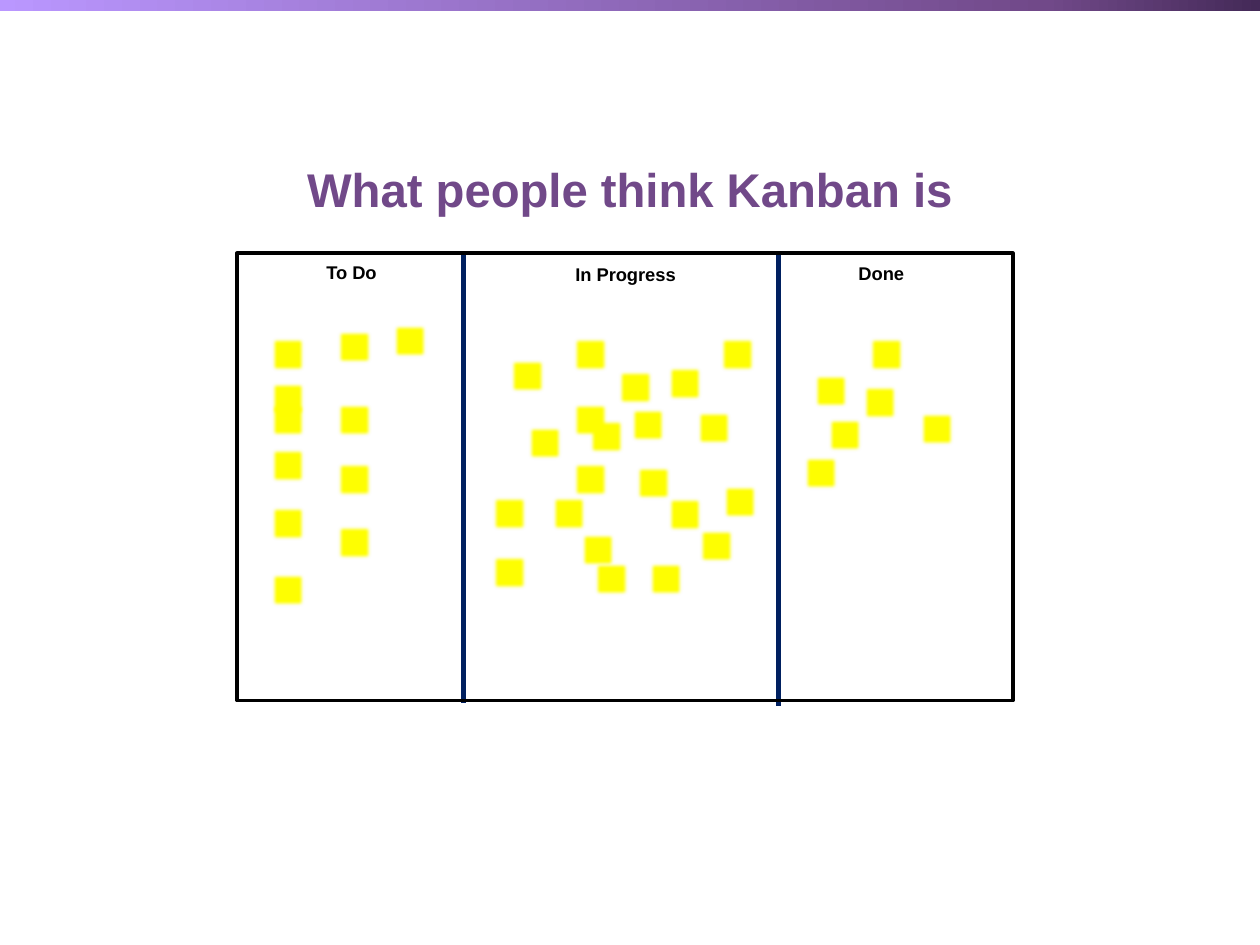
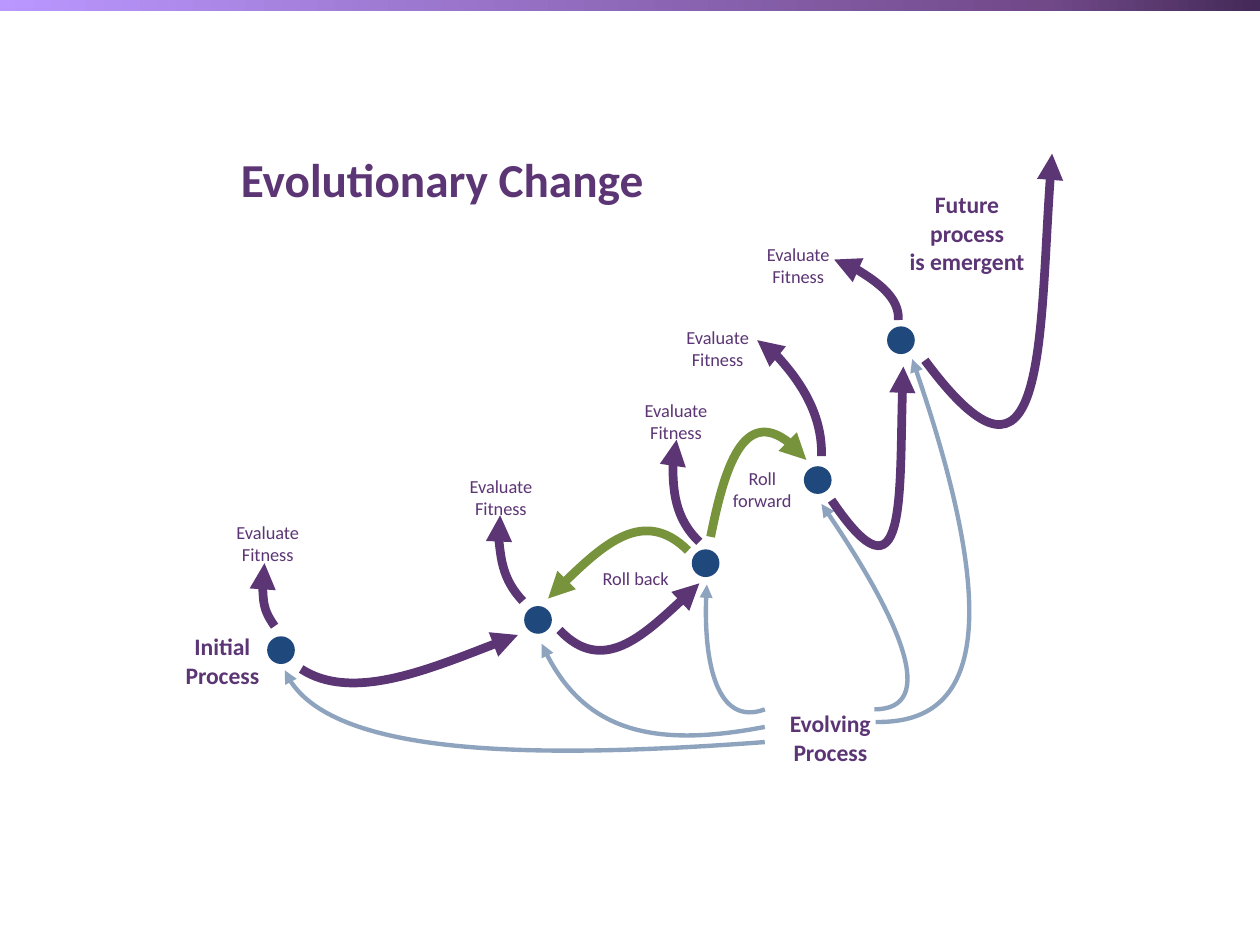
import pptx
import pptx.util
from pptx.dml.color import RGBColor
from pptx.enum.shapes import MSO_CONNECTOR, MSO_SHAPE
from pptx.enum.text import MSO_ANCHOR, MSO_AUTO_SIZE, PP_ALIGN
from pptx.oxml.ns import qn
from copy import deepcopy
from lxml import etree

BLACK = RGBColor(0x00, 0x00, 0x00)
NAVY = RGBColor(0x00, 0x20, 0x60)
YELLOW = RGBColor(0xFF, 0xFF, 0x00)
BLUE = RGBColor(0x1F, 0x49, 0x7D)
GREEN = RGBColor(0x77, 0x93, 0x3C)
VIOLET = RGBColor(0x5C, 0x35, 0x75)
PLUM = RGBColor(0x71, 0x49, 0x89)
BAND_STOPS = [
    (0, RGBColor(0x44, 0x2A, 0x58)),
    (0.17, PLUM),
    (1, RGBColor(0xBA, 0x97, 0xFF)),
]
UNIT = 2.54  # centimetres in one layout unit
NOTE, DOT = 0.29, 0.22

# Sticky notes per board column: left edge -> top edges
TO_DO = {
    2.14: [2.67, 3.02, 3.19, 3.55, 4.01, 4.54],
    2.67: [2.61, 3.19, 3.66, 4.16],
    3.11: [2.56],
}
IN_PROGRESS = {
    3.9: [3.93, 4.4], 4.04: [2.84], 4.18: [3.37], 4.37: [3.93],
    4.54: [2.67, 3.19, 3.66], 4.6: [4.22], 4.67: [3.32], 4.71: [4.45],
    4.9: [2.93], 5: [3.23], 5.04: [3.69], 5.14: [4.45],
    5.29: [2.9, 3.94], 5.52: [3.25], 5.54: [4.19], 5.71: [2.67], 5.73: [3.84],
}
DONE = {
    6.37: [3.61], 6.45: [2.96], 6.56: [3.31],
    6.84: [3.05], 6.89: [2.67], 7.29: [3.26],
}

# Curves: start, two control points, arrow tip
PROCESS_DOTS = [(2.12, 5.05), (4.16, 4.81), (5.49, 4.36), (6.38, 3.7), (7.04, 2.59)]
STEPS = [
    [(2.39, 5.31), (2.79, 5.57), (3.54, 5.26), (4.11, 5.04)],
    [(4.44, 5), (4.78, 5.36), (5.22, 4.95), (5.55, 4.63)],
    [(6.6, 3.97), (7.2, 4.86), (7.13, 3.79), (7.17, 2.91)],
    [(7.34, 2.86), (8.31, 4.17), (8.24, 2.55), (8.35, 1.22)],
]
EVOLVING = [
    [(6.07, 5.89), (4.2, 6.03), (2.54, 5.99), (2.26, 5.32)],
    [(6.07, 5.77), (5.19, 5.94), (4.6, 5.79), (4.3, 5.11)],
    [(6.07, 5.63), (5.69, 5.77), (5.57, 5.2), (5.61, 4.64)],
    [(6.95, 5.73), (7.59, 5.74), (8.09, 5.28), (7.24, 2.85)],
    [(6.94, 5.63), (7.46, 5.63), (7.12, 4.87), (6.52, 4)],
]
# Label position and curve of each fitness check
CHECKS = [
    ((1.72, 4.09), [(2.18, 4.97), (2.08, 4.83), (2.06, 4.54), (2.1, 4.47)]),
    ((3.57, 3.72), [(4.15, 4.77), (3.99, 4.6), (3.92, 4.2), (3.97, 4.09)]),
    ((4.96, 3.12), [(5.55, 4.3), (5.35, 4.11), (5.3, 3.63), (5.37, 3.49)]),
    ((5.29, 2.54), [(6.52, 3.62), (6.53, 3.27), (6.18, 2.76), (6.01, 2.7)]),
    ((5.93, 1.88), [(7.13, 2.54), (7.14, 2.36), (6.79, 2.09), (6.62, 2.06)]),
]
ROLL_BACK = [(5.46, 4.37), (5.11, 4.02), (4.67, 4.42), (4.35, 4.75)]
ROLL_FORWARD = [(5.64, 4.26), (5.75, 3.71), (5.94, 3.1), (6.4, 3.65)]


def units(*values):
    return [pptx.util.Cm(v * UNIT) for v in values]


def add_shape(s, kind, at, fill=None, line=None, width=1):
    sp = s.shapes.add_shape(kind, *units(*at))
    sp.shadow.inherit = False
    if fill is None:
        sp.fill.background()
    else:
        sp.fill.solid()
        sp.fill.fore_color.rgb = fill
    if line is None:
        sp.line.fill.background()
    else:
        sp.line.color.rgb = line
        sp.line.width = pptx.util.Pt(width)
    return sp


def add_band(s):
    sp = add_shape(s, MSO_SHAPE.RECTANGLE, (-0.02, -0.02, 10.02, 0.11))
    sp.fill.gradient()
    sp.fill.gradient_angle = 180
    first = sp._element.spPr.find(".//" + qn("a:gs"))
    first.addnext(deepcopy(first))
    for stop, (position, color) in zip(sp.fill.gradient_stops, BAND_STOPS):
        stop.position = position
        stop.color.rgb = color


def add_text(s, text, at, size, color, font="Calibri", bold=False, wrap=True):
    tb = s.shapes.add_textbox(*units(*at))
    tf = tb.text_frame
    tf.word_wrap = wrap
    tf.auto_size = MSO_AUTO_SIZE.SHAPE_TO_FIT_TEXT
    tf.text = text
    for p in tf.paragraphs:
        p.alignment = PP_ALIGN.CENTER
        for r in p.runs:
            r.font.name = font
            r.font.size = pptx.util.Pt(size)
            r.font.bold = bold
            r.font.color.rgb = color
    return tf


def add_title(s, text, at, color, font):
    tf = add_text(s, text, at, 27, color, font, bold=True)
    tf.auto_size = MSO_AUTO_SIZE.NONE
    tf.vertical_anchor = MSO_ANCHOR.MIDDLE


def add_divider(s, x, top, bottom):
    cn = s.shapes.add_connector(MSO_CONNECTOR.STRAIGHT, *units(x, top, x, bottom))
    cn.line.color.rgb = NAVY
    cn.line.width = pptx.util.Pt(3)
    etree.SubElement(cn._element.spPr, qn("a:effectLst"))


def add_notes(s, column):
    for x, tops in column.items():
        for y in tops:
            sp = add_shape(s, MSO_SHAPE.RECTANGLE, (x, y, NOTE, NOTE), YELLOW, NAVY, 0.5)
            effects = sp._element.spPr.find(qn("a:effectLst"))
            etree.SubElement(effects, qn("a:softEdge"), rad="31750")


def bezier(points, t):
    weights = ((1 - t) ** 3, 3 * t * (1 - t) ** 2, 3 * t * t * (1 - t), t ** 3)
    return [round(sum(w * p[i] for w, p in zip(weights, points))) for i in (0, 1)]


def add_curve(s, points, color, width=5, alpha=None):
    points = [units(*p) for p in points]
    # The sampled outline gives the frame its tight size
    fb = s.shapes.build_freeform(*points[0], scale=1.0)
    fb.add_line_segments([bezier(points, i / 24) for i in range(1, 25)], close=False)
    sp = fb.convert_to_shape()
    sp.shadow.inherit = False
    sp.fill.background()
    # One true cubic segment replaces the samples
    outline = sp._element.spPr.find(".//" + qn("a:path"))
    for segment in outline.findall(qn("a:lnTo")):
        outline.remove(segment)
    cubic = etree.SubElement(outline, qn("a:cubicBezTo"))
    for x, y in points[1:]:
        etree.SubElement(cubic, qn("a:pt"), x=str(x - sp.left), y=str(y - sp.top))
    # Line and arrowhead
    sp.line.color.rgb = color
    sp.line.width = pptx.util.Pt(width)
    ln = sp._element.spPr.find(qn("a:ln"))
    if alpha:
        etree.SubElement(ln.find(".//" + qn("a:srgbClr")), qn("a:alpha"), val=str(alpha * 1000))
    etree.SubElement(ln, qn("a:tailEnd"), type="triangle")


def add_slide(prs):
    s = prs.slides.add_slide(prs.slide_layouts[6])
    add_band(s)
    return s


def build_board(prs):
    s = add_slide(prs)
    add_divider(s, 3.68, 2.01, 5.58)
    add_divider(s, 6.18, 2.02, 5.6)
    for column in (TO_DO, IN_PROGRESS, DONE):
        add_notes(s, column)
    for text, at in (
        ("To Do", (2.48, 2.02, 0.62, 0.28)),
        ("In Progress", (4.46, 2.04, 1.01, 0.28)),
        ("Done", (6.71, 2.03, 0.57, 0.28)),
    ):
        add_text(s, text, at, 10.5, BLACK, "Arial", bold=True, wrap=False)
    add_shape(s, MSO_SHAPE.RECTANGLE, (1.88, 2.01, 6.16, 3.55), line=BLACK, width=2)
    add_title(s, "What people think Kanban is", (0.69, 1.24, 8.62, 0.51), PLUM, "Arial")


def build_evolution(prs):
    s = add_slide(prs)
    # Process path
    for x, y in PROCESS_DOTS:
        add_shape(s, MSO_SHAPE.OVAL, (x, y, DOT, DOT), BLUE)
    for points in STEPS:
        add_curve(s, points, VIOLET)
    for points in EVOLVING:
        add_curve(s, points, BLUE, 2.5, alpha=50)
    # Stage names
    for text, at in (
        ("Evolving Process", (6.07, 5.58, 1.04, 0.56)),
        ("Initial Process", (1.36, 4.97, 0.81, 0.56)),
        ("Future process\nis emergent", (7.09, 1.46, 1.17, 0.78)),
    ):
        add_text(s, text, at, 13.5, VIOLET, bold=True)
    # Fitness checks
    for position, points in CHECKS:
        add_curve(s, points, VIOLET)
        add_text(s, "Evaluate Fitness", (*position, 0.81, 0.45), 10.5, VIOLET)
    add_title(s, "Evolutionary Change", (0.28, 1.07, 6.46, 0.69), VIOLET, "Calibri")
    # Rolling back and forward
    for text, at, points in (
        ("Roll back", (4.64, 4.45, 0.81, 0.28), ROLL_BACK),
        ("Roll forward", (5.71, 3.66, 0.68, 0.45), ROLL_FORWARD),
    ):
        add_curve(s, points, GREEN)
        add_text(s, text, at, 10.5, VIOLET)


def main():
    prs = pptx.Presentation()
    prs.slide_width, prs.slide_height = units(10, 7.5)
    build_board(prs)
    build_evolution(prs)
    prs.save("out.pptx")


if __name__ == "__main__":
    main()
